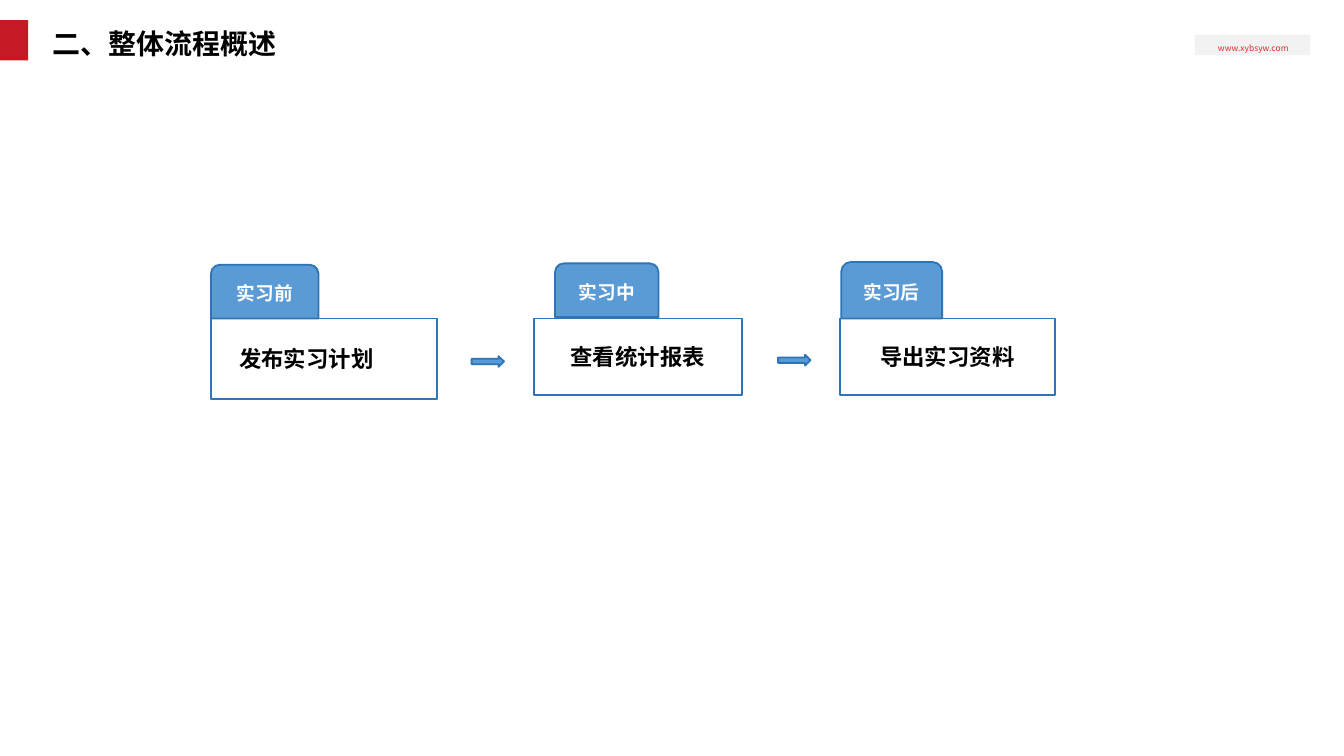
from lxml.etree import SubElement
from pptx import Presentation
from pptx.dml.color import RGBColor
from pptx.enum.shapes import MSO_SHAPE
from pptx.enum.text import MSO_ANCHOR, MSO_AUTO_SIZE, PP_ALIGN
from pptx.oxml.ns import qn
from pptx.util import Inches, Pt

RED = RGBColor(0xC5, 0x1A, 0x24)
LINK_RED = RGBColor(0xD6, 0x2F, 0x2F)
GRAY = RGBColor(0xF2, 0xF2, 0xF2)
BLUE = RGBColor(0x5B, 0x9B, 0xD5)
DARK_BLUE = RGBColor(0x2E, 0x75, 0xB6)
WHITE = RGBColor(0xFF, 0xFF, 0xFF)
BLACK = RGBColor(0, 0, 0)
CJK_FONT = "Noto Sans CJK SC"

# Each stage: tab text, tab box, step text, step box, step shape
STAGES = [
    ("实习前", (1.57, 1.97, 0.8, 0.4),
     "发布实习计划", (1.57, 2.37, 1.68, 0.6), MSO_SHAPE.RECTANGLE),
    ("实习中", (4.13, 1.96, 0.77, 0.4),
     "查看统计报表", (3.97, 2.37, 1.55, 0.57), MSO_SHAPE.FLOWCHART_PROCESS),
    ("实习后", (6.26, 1.95, 0.75, 0.42),
     "导出实习资料", (6.25, 2.37, 1.6, 0.57), MSO_SHAPE.RECTANGLE),
]
ARROWS = [(3.51, 2.65, 0.24, 0.08), (5.79, 2.64, 0.24, 0.08)]


def write(sp, text, size, color, font=CJK_FONT, bold=True,
          align=PP_ALIGN.CENTER, anchor=MSO_ANCHOR.MIDDLE):
    tf = sp.text_frame
    tf.word_wrap = True
    tf.vertical_anchor = anchor
    p = tf.paragraphs[0]
    p.alignment = align
    r = p.add_run()
    r.text = text
    r.font.size = Pt(size)
    r.font.bold = bold
    r.font.name = font
    r.font.color.rgb = color
    # East Asian typeface for the Chinese characters
    SubElement(r.font._element, qn("a:ea")).set("typeface", CJK_FONT)
    return tf


def set_margins(tf, margin):
    tf.margin_left = tf.margin_right = Inches(margin)
    tf.margin_top = tf.margin_bottom = Inches(margin)


def add_box(s, kind, box, fill, line=None):
    sp = s.shapes.add_shape(kind, *map(Inches, box))
    sp.shadow.inherit = False
    sp.fill.solid()
    sp.fill.fore_color.rgb = fill
    if line is None:
        sp.line.fill.background()
    else:
        sp.line.color.rgb = line
        sp.line.width = Pt(1)
    return sp


def add_title(s, text):
    sp = s.shapes.title
    sp.left, sp.top, sp.width, sp.height = map(Inches, (0.34, 0.15, 4.18, 0.35))
    tf = write(sp, text, 15, BLACK, align=PP_ALIGN.LEFT, anchor=MSO_ANCHOR.TOP)
    tf.auto_size = MSO_AUTO_SIZE.NONE
    set_margins(tf, 0.05)


def add_web_address(s, text):
    add_box(s, MSO_SHAPE.RECTANGLE, (8.89, 0.26, 0.86, 0.15), GRAY)
    sp = s.shapes.add_textbox(*map(Inches, (9, 0.27, 0.65, 0.18)))
    tf = write(sp, text, 4.5, LINK_RED, bold=False, anchor=MSO_ANCHOR.TOP)
    set_margins(tf, 0.05)


def add_stage(s, tab_text, tab_box, step_text, step_box, step_kind):
    step = add_box(s, step_kind, step_box, WHITE, DARK_BLUE)
    write(step, step_text, 12, BLACK, "Arial")
    tab = add_box(s, MSO_SHAPE.ROUND_2_SAME_RECTANGLE, tab_box, BLUE, DARK_BLUE)
    write(tab, tab_text, 10, WHITE, "Calibri")
    return step


def main():
    # Widescreen slide, 16:9
    prs = Presentation()
    prs.slide_width = Inches(10)
    prs.slide_height = Inches(10 * 9 / 16)
    s = prs.slides.add_slide(prs.slide_layouts[5])

    # Header
    add_web_address(s, "www.xybsyw.com")
    add_title(s, "二、整体流程概述")
    add_box(s, MSO_SHAPE.RECTANGLE, (0, 0.15, 0.21, 0.3), RED)

    # Process stages; the first step is left-aligned with an indent
    steps = [add_stage(s, *stage) for stage in STAGES]
    first = steps[0].text_frame
    first.paragraphs[0].alignment = PP_ALIGN.LEFT
    first.margin_left = Inches(0.21)

    # Arrows between the stages
    for box in ARROWS:
        add_box(s, MSO_SHAPE.RIGHT_ARROW, box, BLUE, DARK_BLUE)

    prs.save("out.pptx")


if __name__ == "__main__":
    main()
